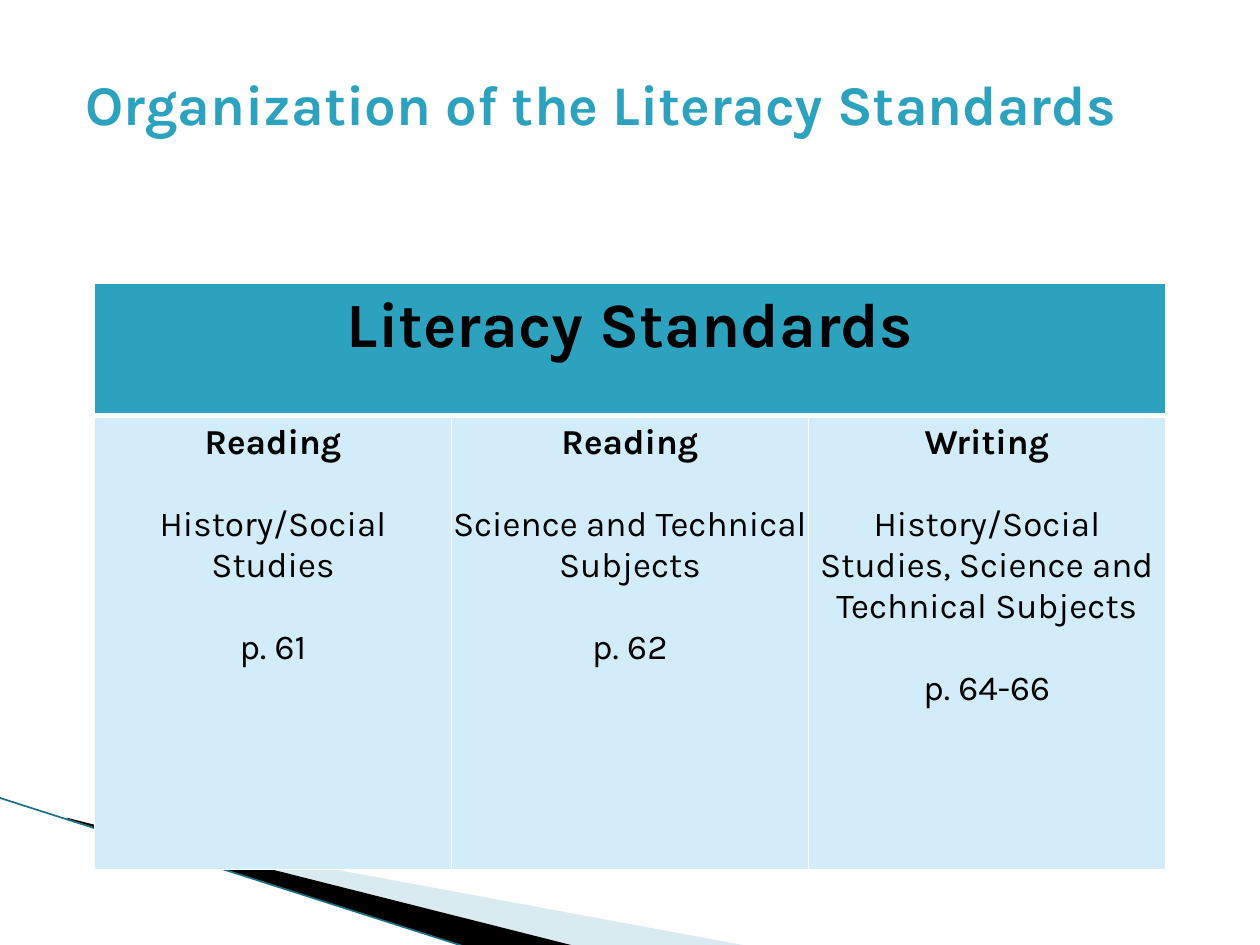
from collections import namedtuple
from dataclasses import dataclass

from lxml import etree
from pptx import Presentation
from pptx import util as u
from pptx.dml.color import RGBColor
from pptx.enum import shapes, text
from pptx.oxml.ns import qn

Inches = u.Inches
Box = namedtuple("Box", "left top width height")


@dataclass(frozen=True)
class Theme:
    font: str = "Karla"
    accent: str = "2DA2BF"
    cell: str = "D2ECF9"
    ink: str = "000000"
    paper: str = "FFFFFF"
    sweep: str = "A0CBDC"
    edge: str = "1A6F83"
    title_size: int = 32
    header_size: int = 36
    body_size: int = 20
    gap: float = 23.4  # one empty body line, in points


THEME = Theme()
COLUMNS = [
    ("Reading", "History/Social Studies", "p. 61"),
    ("Reading", "Science and Technical Subjects", "p. 62"),
    ("Writing", "History/Social Studies, Science and Technical Subjects", "p. 64-66"),
]


def style(paragraph, size, color, bold=False):
    for run in paragraph.runs:
        run.font.name = THEME.font
        run.font.size = u.Pt(size)
        run.font.bold = bold
        run.font.color.rgb = RGBColor.from_string(color)


def add_sweep(slide, box, points, color, alpha=None):
    """Filled outline whose points are inches from the box corner."""
    corners = [(Inches(box.left + x), Inches(box.top + y)) for x, y in points]
    builder = slide.shapes.build_freeform(*corners[0], scale=1.0)
    builder.add_line_segments(corners[1:], close=True)
    shape = builder.convert_to_shape()
    shape.shadow.inherit = False
    shape.fill.solid()
    shape.fill.fore_color.rgb = RGBColor.from_string(color)
    shape.line.fill.background()
    if alpha is not None:
        fill_color = shape.fill._xPr.find(".//" + qn("a:srgbClr"))
        etree.SubElement(fill_color, qn("a:alpha"), val=str(alpha * 1000))


def add_corner(slide, box):
    # Pale and black wedges
    add_sweep(slide, box, [(0.55, 0.18), (5.95, 1.18), (4.56, 1.18), (0.55, 0.17)],
              THEME.sweep, alpha=40)
    add_sweep(slide, box, [(0.53, 0.16), (4.57, 1.18), (3.72, 1.19), (0.54, 0.17)],
              THEME.ink)
    # Thin edge line
    line = slide.shapes.add_connector(
        shapes.MSO_CONNECTOR.STRAIGHT, Inches(box.left - 0.01), Inches(box.top),
        Inches(box.left + 3.71), Inches(box.top + 1.19))
    line.line.color.rgb = RGBColor.from_string(THEME.edge)
    line.line.width = u.Pt(0.95)
    etree.SubElement(line._element.spPr, qn("a:effectLst"))


def add_title(slide, box):
    shape = slide.shapes.add_textbox(*map(Inches, box))
    frame = shape.text_frame
    frame.word_wrap = True
    frame.vertical_anchor = text.MSO_ANCHOR.TOP
    frame.text = "Organization of the Literacy Standards"
    style(frame.paragraphs[0], THEME.title_size, THEME.accent, bold=True)


def format_cell(cell, color, top=1, bottom=1):
    cell.margin_left = cell.margin_right = 0
    cell.margin_top = cell.margin_bottom = Inches(0.05)
    cell.fill.solid()
    cell.fill.fore_color.rgb = RGBColor.from_string(color)
    properties = cell._tc.get_or_add_tcPr()
    borders = [("L", 1), ("R", 1), ("T", top), ("B", bottom)]
    for index, (side, width) in enumerate(borders):
        border = etree.Element(qn(f"a:ln{side}"), w=str(u.Pt(width)))
        fill = etree.SubElement(border, qn("a:solidFill"))
        etree.SubElement(fill, qn("a:srgbClr"), val=THEME.paper)
        properties.insert(index, border)


def write_cell(cell, lines, size, gap=0):
    """Centred lines, the first one bold."""
    frame = cell.text_frame
    frame.text = "\n".join(lines)
    for index, paragraph in enumerate(frame.paragraphs):
        paragraph.alignment = text.PP_ALIGN.CENTER
        if index:
            paragraph.space_before = u.Pt(gap)
        style(paragraph, size, THEME.ink, bold=index == 0)


def add_standards_table(slide, box, header_height):
    table = slide.shapes.add_table(2, len(COLUMNS), *map(Inches, box)).table
    for column in table.columns:
        column.width = Inches(box.width / len(COLUMNS))
    table.rows[0].height = Inches(header_height)
    table.rows[1].height = Inches(box.height - header_height)

    # Header across all columns
    header = table.cell(0, 0)
    header.merge(table.cell(0, len(COLUMNS) - 1))
    write_cell(header, ["Literacy Standards"], THEME.header_size)

    # One strand per column
    for index, lines in enumerate(COLUMNS):
        format_cell(table.cell(0, index), THEME.accent, bottom=3)
        format_cell(table.cell(1, index), THEME.cell, top=3)
        write_cell(table.cell(1, index), lines, THEME.body_size, THEME.gap)


def main():
    presentation = Presentation()
    presentation.slide_width = Inches(10)
    presentation.slide_height = Inches(7.5)
    slide = presentation.slides.add_slide(presentation.slide_layouts[6])
    add_corner(slide, Box(0, 6.33, 5.95, 1.19))
    add_standards_table(slide, Box(0.75, 2.25, 8.5, 4.65), header_height=1.05)
    add_title(slide, Box(0.58, 0.5, 9.75, 1.25))
    presentation.save("out.pptx")


if __name__ == "__main__":
    main()
